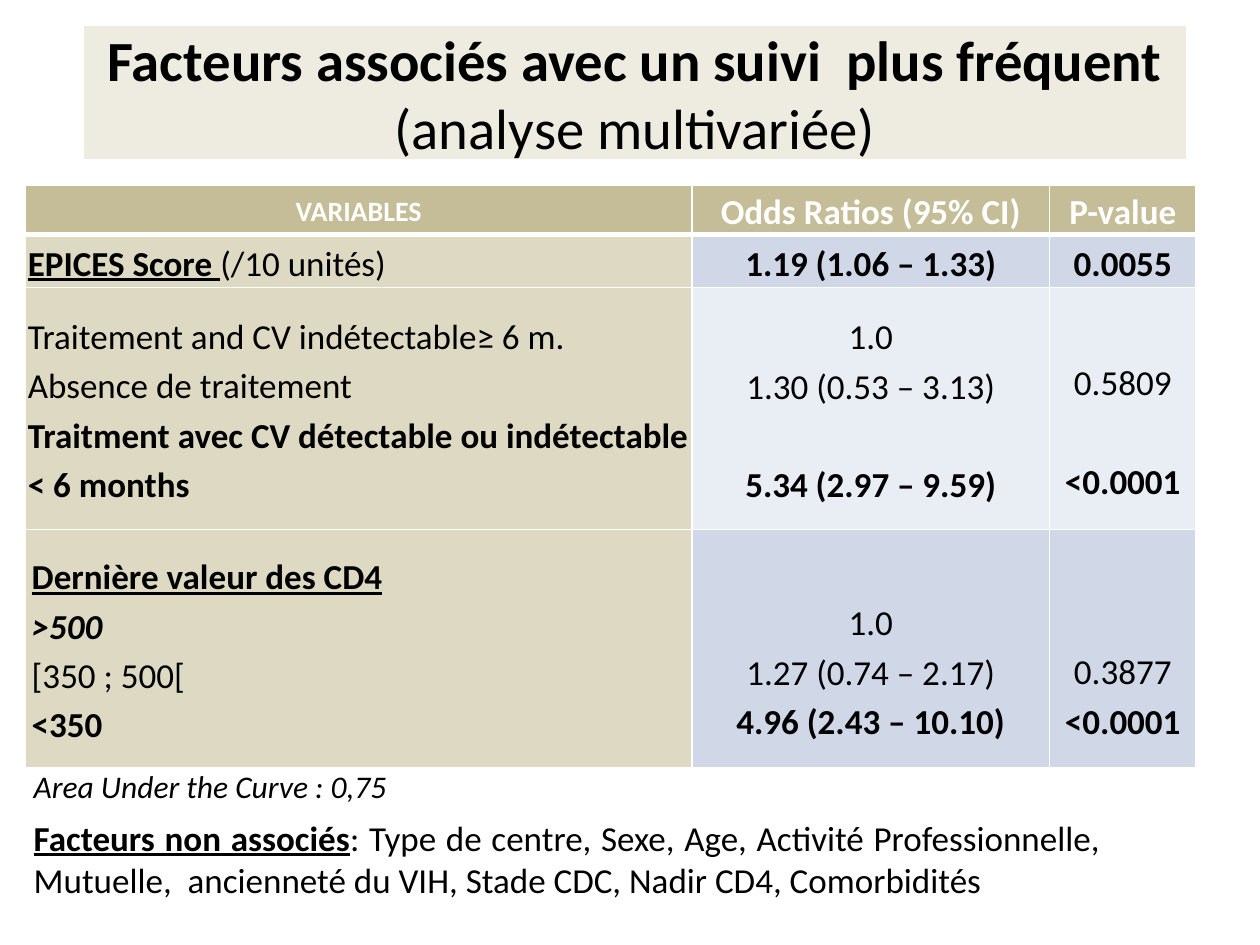
from lxml import etree
from pptx import Presentation
from pptx.dml.color import RGBColor
from pptx.enum.text import MSO_ANCHOR, MSO_AUTO_SIZE, PP_ALIGN
from pptx.oxml.ns import qn
from pptx.util import Cm, Pt

LEFT, CENTER, JUSTIFY = PP_ALIGN.LEFT, PP_ALIGN.CENTER, PP_ALIGN.JUSTIFY
MIDDLE, TOP = MSO_ANCHOR.MIDDLE, MSO_ANCHOR.TOP
NO_FIT = MSO_AUTO_SIZE.NONE
TITLE_ONLY = 5

THEME = {
    "font": "Calibri", "black": "000000", "white": "FFFFFF",
    "title_fill": "EEECE1", "header": "C4BD97", "label": "DDD9C3",
    "band": "D0D8E8", "band_light": "E9EDF4",
    "title_size": 32.4, "body_size": 20, "note_size": 18, "small_size": 16,
    "spacing": 1.15,
}
LINE = THEME["body_size"] * 1.22  # natural height of a body line, in points

# Content: a paragraph is a list of (text, style); b bold, i italic, u underline
TITLE = [("Facteurs associés avec un suivi  plus fréquent ", "b"),
         ("(analyse multivariée)", "")]
HEADERS = [("VARIABLES", "small_size"), ("Odds Ratios (95% CI)", "body_size"),
           ("P-value", "body_size")]
# None leaves one line free so that values face their label
ROWS = [
    [[[("EPICES Score ", "bu"), ("(/10 unités)", "")]],
     [[("1.19 (1.06 – 1.33)", "b")]],
     [[("0.0055", "b")]]],
    [[[("Traitement and CV indétectable≥ 6 m.", "")],
      [("Absence de traitement", "")],
      [("Traitment avec CV détectable ou indétectable < 6 months", "b")]],
     [[("1.0", "")], [("1.30 (0.53 – 3.13)", "")], None,
      [("5.34 (2.97 – 9.59)", "b")]],
     [None, [("0.5809", "")], None, [("<0.0001", "b")]]],
    [[[("Dernière valeur des CD4", "bu")], [(">500", "bi")],
      [("[350\N{NO-BREAK SPACE}; 500[", "")], [("<350", "b")]],
     [None, [("1.0", "")], [("1.27 (0.74 – 2.17)", "")],
      [("4.96 (2.43 – 10.10)", "b")]],
     [None, None, [("0.3877", "")], [("<0.0001", "b")]]],
]
ROW_FILLS = ["band", "band_light", "band"]
ROW_INSETS = [0.05, 0.05, 0.13]
COLUMN_WIDTHS = [13.44, 7.21, 2.95]
ROW_HEIGHTS = [0.86, 1.07, 4.88, 4.8]
NOTES = [  # left, top, width, height, size, paragraph
    (0.43, 15.34, 20.83, 1.02, "note_size",
     [("Area Under the Curve : 0,75", "i")]),
    (0.43, 16.33, 22, 1.96, "body_size",
     [("Facteurs non associés", "bu"),
      (": Type de centre, Sexe, Age, Activité Professionnelle, Mutuelle,  "
       "ancienneté du VIH, Stade CDC, Nadir CD4, Comorbidités", "")]),
]


def color(name):
    return RGBColor.from_string(THEME[name])


def write(para, spans, size, align, ink="black"):
    para.alignment = align
    for text, style in spans:
        span = para.add_run()
        span.text = text
        font = span.font
        font.name, font.size = THEME["font"], Pt(THEME[size])
        font.color.rgb = color(ink)
        font.bold, font.italic, font.underline = (key in style for key in "biu")


def set_borders(cell, bottom):
    properties = cell._tc.get_or_add_tcPr()
    for index, side in enumerate("LRTB"):
        width = bottom if side == "B" else 1
        line = etree.Element(qn("a:ln" + side), w=str(Pt(width)))
        fill = etree.SubElement(line, qn("a:solidFill"))
        etree.SubElement(fill, qn("a:srgbClr"), val=THEME["white"])
        properties.insert(index, line)


def fill_cell(cell, paragraphs, fill, align, inset, size="body_size",
              ink="black", bottom=1):
    cell.fill.solid()
    cell.fill.fore_color.rgb = color(fill)
    set_borders(cell, bottom)
    cell.vertical_anchor = MIDDLE
    cell.margin_left = cell.margin_right = Cm(inset)
    cell.margin_top = cell.margin_bottom = 0
    frame = cell.text_frame
    gap, started = 0, False
    for spans in paragraphs:
        if spans is None:
            # The first line of a cell takes no extra line spacing
            gap += LINE * (THEME["spacing"] if started or gap else 1)
            continue
        para = frame.add_paragraph() if started else frame.paragraphs[0]
        if started:
            para.space_before = Pt(gap)
        else:
            cell.margin_top = Pt(gap)
        para.line_spacing = THEME["spacing"]
        write(para, spans, size, align, ink)
        gap, started = 0, True


deck = Presentation()
deck.slide_width, deck.slide_height = Cm(25.4), Cm(19.05)
page = deck.slides.add_slide(deck.slide_layouts[TITLE_ONLY])

# Title
title = page.shapes.title
title.left, title.top, title.width, title.height = map(Cm, (1.7, 0.53, 22.2, 2.67))
title.fill.solid()
title.fill.fore_color.rgb = color("title_fill")
title.line.color.rgb = color("title_fill")
title.line.width = Pt(0.75)
title.text_frame.auto_size = NO_FIT
title.text_frame.vertical_anchor = MIDDLE
write(title.text_frame.paragraphs[0], TITLE, "title_size", CENTER)

# Table of results
table = page.shapes.add_table(
    len(ROW_HEIGHTS), len(COLUMN_WIDTHS), Cm(0.51), Cm(3.73),
    Cm(sum(COLUMN_WIDTHS)), Cm(sum(ROW_HEIGHTS))).table
for column, width in zip(table.columns, COLUMN_WIDTHS):
    column.width = Cm(width)
for row, height in zip(table.rows, ROW_HEIGHTS):
    row.height = Cm(height)
for index, (text, size) in enumerate(HEADERS):
    fill_cell(table.cell(0, index), [[(text, "b")]], "header", CENTER, 0.05,
              size, "white", 3)
for row_index, (cells, fill, inset) in enumerate(
        zip(ROWS, ROW_FILLS, ROW_INSETS), start=1):
    for index, paragraphs in enumerate(cells):
        fill_cell(table.cell(row_index, index), paragraphs,
                  fill if index else "label", CENTER if index else LEFT, inset)

# Notes under the table
for *place, size, spans in NOTES:
    box = page.shapes.add_textbox(*map(Cm, place))
    box.text_frame.word_wrap = True
    box.text_frame.vertical_anchor = TOP
    write(box.text_frame.paragraphs[0], spans, size, JUSTIFY)

deck.save("out.pptx")
